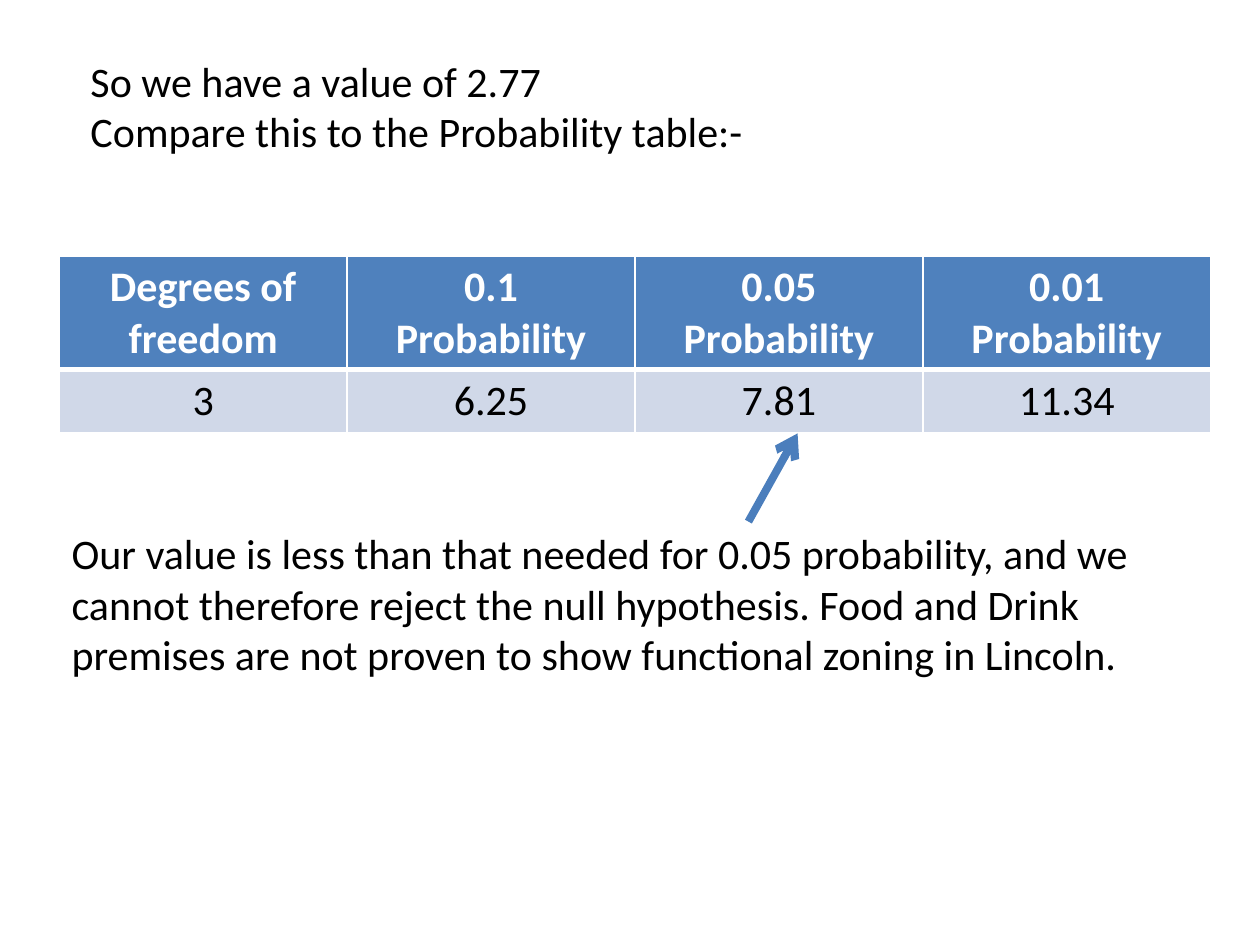
from dataclasses import dataclass
from lxml import etree
from pptx import Presentation
from pptx import util as u
from pptx.dml.color import RGBColor
from pptx.enum import shapes, text
from pptx.oxml.ns import qn


@dataclass(frozen=True)
class Theme:
    font: str = "Calibri"
    size: int = 24
    ink: str = "000000"
    paper: str = "FFFFFF"
    header: str = "4F81BD"
    band: str = "D0D8E8"
    arrow: str = "4B7EBC"
    arrow_width: float = 4.5
    border: int = 1
    header_rule: int = 3


THEME = Theme()
SLIDE_WIDTH, SLIDE_HEIGHT = u.Inches(10), u.Inches(7.5)
COLUMNS, ROWS = 100, 75

INTRODUCTION = ["So we have a value of 2.77", "Compare this to the Probability table:-"]
PROBABILITIES = [
    [["Degrees of freedom"], ["0.1", "Probability"], ["0.05", "Probability"], ["0.01", "Probability"]],
    [["3"], ["6.25"], ["7.81"], ["11.34"]],
]
CONCLUSION = [
    "Our value is less than that needed for 0.05 probability, and we cannot therefore reject "
    "the null hypothesis. Food and Drink premises are not proven to show functional zoning in Lincoln."
]


def place(*lengths):
    steps = (SLIDE_WIDTH / COLUMNS, SLIDE_HEIGHT / ROWS)
    return [u.Emu(round(length * steps[index % 2])) for index, length in enumerate(lengths)]


def write(frame, lines, color, bold=False, alignment=text.PP_ALIGN.LEFT):
    for index, line in enumerate(lines):
        paragraph = frame.add_paragraph() if index else frame.paragraphs[0]
        paragraph.alignment = alignment
        run = paragraph.add_run()
        run.text = line
        run.font.name = THEME.font
        run.font.size = u.Pt(THEME.size)
        run.font.bold = bold
        run.font.color.rgb = RGBColor.from_string(color)


def add_statement(slide, box, lines):
    shape = slide.shapes.add_textbox(*place(*box))
    shape.text_frame.word_wrap = True
    shape.text_frame.auto_size = text.MSO_AUTO_SIZE.SHAPE_TO_FIT_TEXT
    write(shape.text_frame, lines, THEME.ink)


def add_borders(cell, widths):
    properties = cell._tc.get_or_add_tcPr()
    for index, (side, width) in enumerate(widths.items()):
        line = etree.Element(qn(f"a:{side}"), w=str(u.Pt(width)))
        fill = etree.SubElement(line, qn("a:solidFill"))
        etree.SubElement(fill, qn("a:srgbClr"), val=THEME.paper)
        properties.insert(index, line)


def add_probability_table(slide, box, row_shares):
    left, top, width, height = place(*box)
    rows, columns = len(PROBABILITIES), len(PROBABILITIES[0])
    table = slide.shapes.add_table(rows, columns, left, top, width, height).table
    for column in table.columns:
        column.width = u.Emu(width // columns)
    for row_index, (row, share) in enumerate(zip(PROBABILITIES, row_shares)):
        table.rows[row_index].height = u.Emu(round(height * share))
        is_header = row_index == 0
        widths = dict.fromkeys(("lnL", "lnR", "lnT", "lnB"), THEME.border)
        widths["lnB" if is_header else "lnT"] = THEME.header_rule
        for column_index, lines in enumerate(row):
            cell = table.cell(row_index, column_index)
            cell.fill.solid()
            cell.fill.fore_color.rgb = RGBColor.from_string(THEME.header if is_header else THEME.band)
            add_borders(cell, widths)
            write(cell.text_frame, lines, THEME.paper if is_header else THEME.ink,
                  is_header, text.PP_ALIGN.CENTER)


def add_arrow(slide, start, end):
    connector = slide.shapes.add_connector(shapes.MSO_CONNECTOR.STRAIGHT, *place(*start, *end))
    connector.line.color.rgb = RGBColor.from_string(THEME.arrow)
    connector.line.width = u.Pt(THEME.arrow_width)
    etree.SubElement(connector.line._get_or_add_ln(), qn("a:tailEnd"), type="arrow")
    etree.SubElement(connector._element.spPr, qn("a:effectLst"))


def main():
    presentation = Presentation()
    presentation.slide_width, presentation.slide_height = SLIDE_WIDTH, SLIDE_HEIGHT
    slide = presentation.slides.add_slide(presentation.slide_layouts.get_by_name("Blank"))
    add_statement(slide, (6.2, 3.9, 58.6, 9.1), INTRODUCTION)
    add_probability_table(slide, (4.7, 20.3, 91.4, 13.9), (0.65, 0.35))
    add_statement(slide, (4.7, 41.4, 86.7, 13.1), CONCLUSION)
    add_arrow(slide, (59.4, 41.4), (63.3, 34.4))
    presentation.save("out.pptx")


if __name__ == "__main__":
    main()
